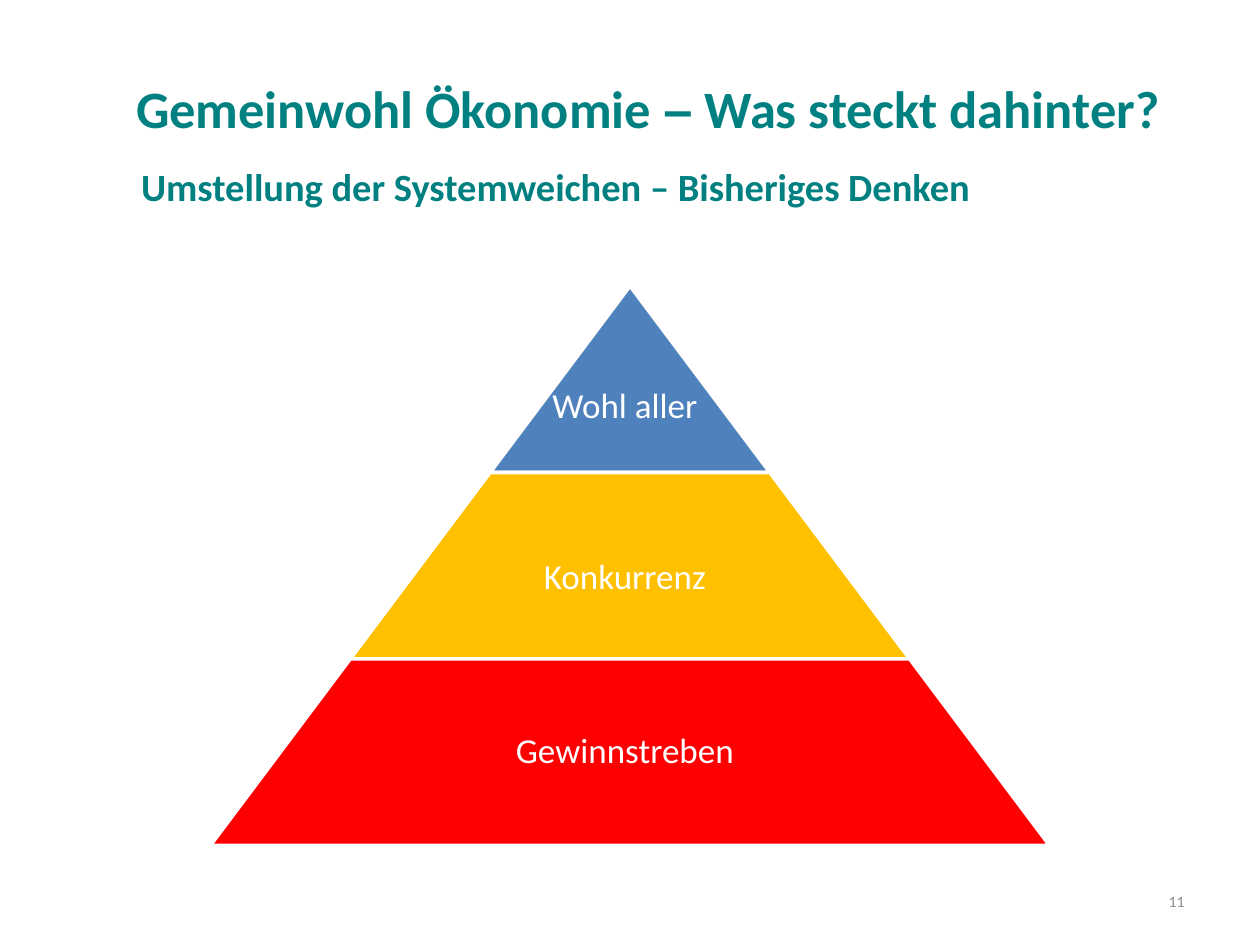
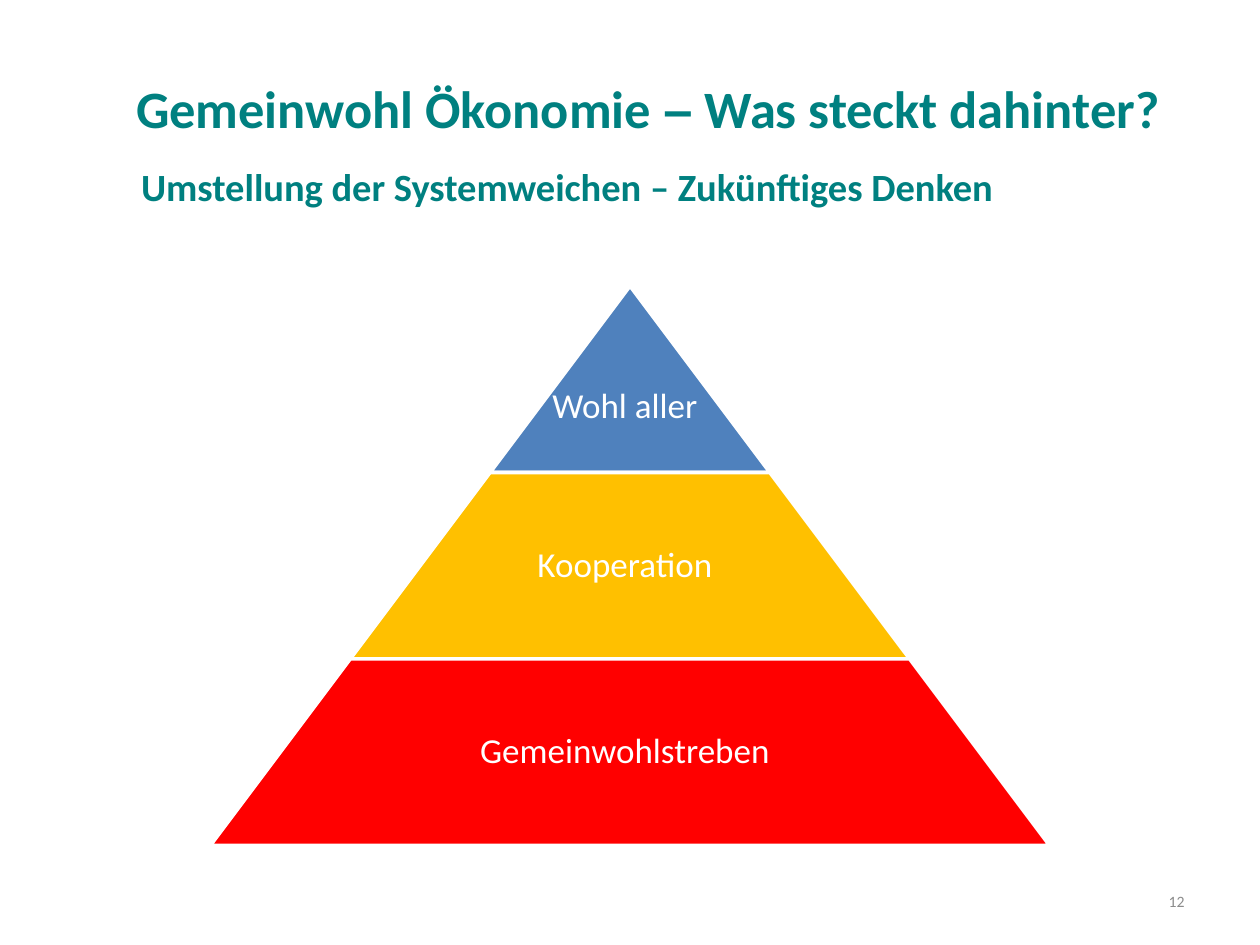
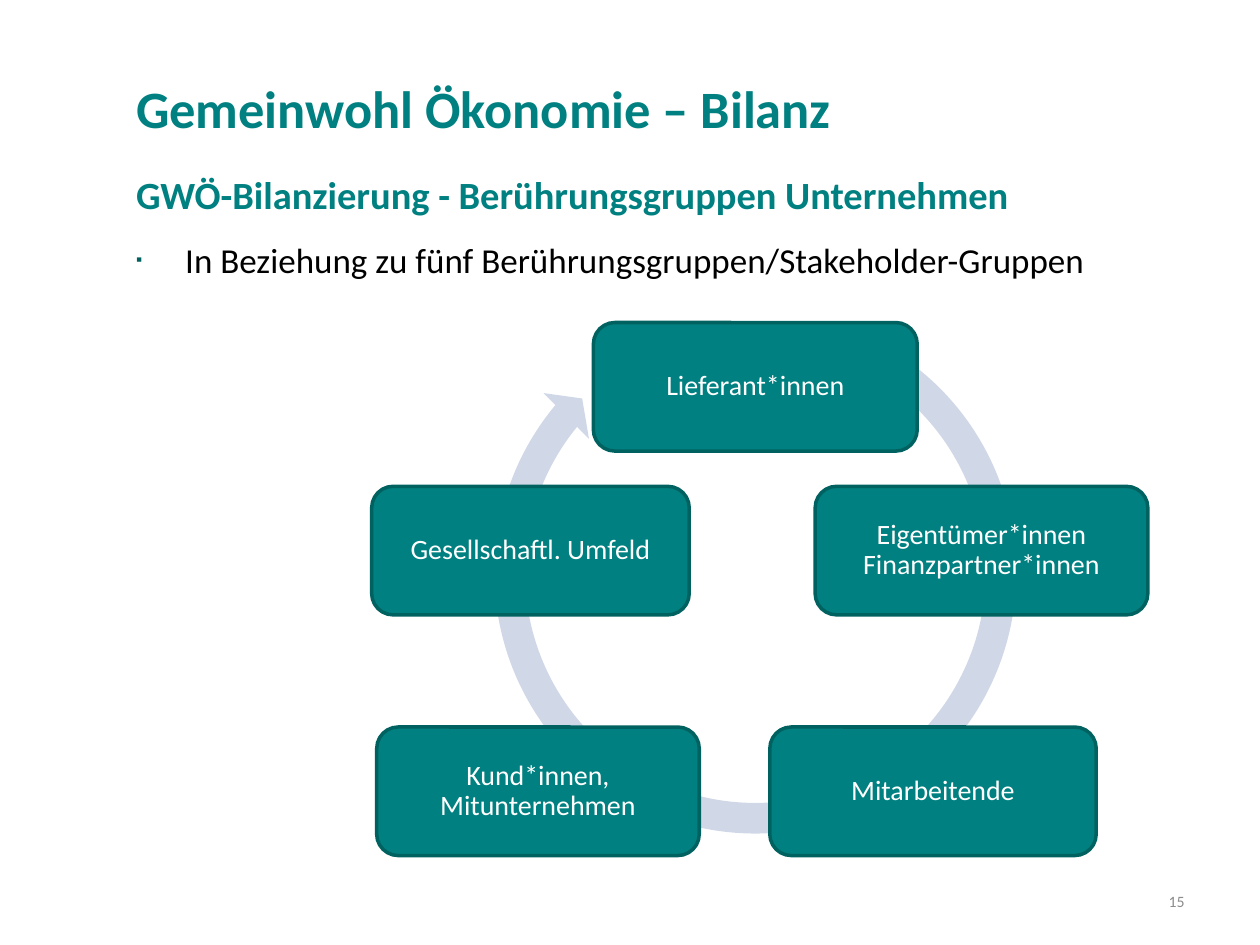
from pptx import Presentation
from pptx.dml.color import RGBColor
from pptx.enum.shapes import MSO_SHAPE
from pptx.enum.text import MSO_ANCHOR, MSO_AUTO_SIZE, PP_ALIGN
from pptx.oxml import parse_xml
from pptx.oxml.ns import nsdecls
from pptx.util import Inches, Pt

COLORS = {
    "teal": "008080", "dark_teal": "006260", "gray": "8C8C8C", "ring": "D0D8E8",
    "blue": "4F81BD", "amber": "FFC000", "red": "FF0000",
    "white": "FFFFFF", "black": "000000",
}
FORMATS = {
    "title": {"size": Pt(30), "bold": True, "color": "teal"},
    "subtitle": {"size": Pt(22), "bold": True, "color": "teal"},
    "bullet": {"size": Pt(20), "bold": False, "color": "black"},
    "number": {"size": Pt(9), "bold": False, "color": "gray"},
    "level": {"size": Pt(20), "bold": False, "color": "white"},
    "group": {"size": Pt(16), "bold": False, "color": "white"},
}


def add_run(p, text, style, font="Calibri"):
    r = p.add_run()
    r.text = text
    r.font.name = font
    for name, value in FORMATS[style].items():
        if name == "color":
            r.font.color.rgb = RGBColor.from_string(COLORS[value])
        else:
            setattr(r.font, name, value)


def add_shape(s, kind, box, fill, line=None, label="", style="group"):
    """Add a flat preset shape with a centred label; box is in inches."""
    sp = s.shapes.add_shape(kind, *map(Inches, box))
    sp.shadow.inherit = False
    sp.fill.solid()
    sp.fill.fore_color.rgb = RGBColor.from_string(COLORS[fill])
    if line:
        sp.line.color.rgb = RGBColor.from_string(COLORS[line])
        sp.line.width = Pt(2)
    else:
        sp.line.fill.background()
    if label:
        tf = sp.text_frame
        tf.vertical_anchor = MSO_ANCHOR.MIDDLE
        for side in ("left", "top", "right", "bottom"):
            setattr(tf, f"margin_{side}", Inches(0.07))
        p = tf.paragraphs[0]
        p.alignment = PP_ALIGN.CENTER
        p.line_spacing = 0.9
        add_run(p, label, style)
    return sp


prs = Presentation()
prs.slide_width, prs.slide_height = Inches(10), Inches(7.5)

# Title, subtitle and number of every slide
QUESTION = [("Gemeinwohl Ökonomie ", "Calibri"), ("–", "Arial"),
            (" Was steckt dahinter?", "Calibri")]
PAGES = [
    ("11", QUESTION, "Umstellung der Systemweichen – Bisheriges Denken",
     (1.02, 1.24, 8.19, 0.47)),
    ("12", QUESTION, "Umstellung der Systemweichen – Zukünftiges Denken",
     (1.02, 1.24, 8.19, 0.47)),
    ("15", [("Gemeinwohl Ökonomie – Bilanz", "Calibri")],
     "GWÖ-Bilanzierung - Berührungsgruppen Unternehmen",
     (0.98, 1.31, 8.52, 0.98)),
]
for number, title, subtitle, body_box in PAGES:
    s = prs.slides.add_slide(prs.slide_layouts[1])
    body = s.placeholders[1]
    number_box = s.shapes.add_textbox(0, 0, 0, 0)
    for sp, box in ((s.shapes.title, (0.98, 0.23, 9, 1.25)), (body, body_box),
                    (number_box, (7.17, 6.95, 2.33, 0.4))):
        sp.left, sp.top, sp.width, sp.height = map(Inches, box)
        tf = sp.text_frame
        tf.word_wrap = True
        tf.auto_size = MSO_AUTO_SIZE.NONE
        tf.vertical_anchor = MSO_ANCHOR.TOP if sp is body else MSO_ANCHOR.MIDDLE

    p = s.shapes.title.text_frame.paragraphs[0]
    p.alignment = PP_ALIGN.LEFT
    for text, font in title:
        add_run(p, text, "title", font)

    p = body.text_frame.paragraphs[0]
    pPr = p._p.get_or_add_pPr()
    pPr.set("marL", "0")
    pPr.set("indent", "0")
    pPr.append(parse_xml(f"<a:buNone {nsdecls('a')}/>"))
    p.space_before = Pt(0)
    add_run(p, subtitle, "subtitle")

    p = number_box.text_frame.paragraphs[0]
    p.alignment = PP_ALIGN.RIGHT
    add_run(p, number, "number")

# Pyramids: each level is one step wider; drop is the label's distance below mid-level
LEVEL_HEIGHT, SLOPE, PYRAMID_TOP, PYRAMID_CENTER = 1.48, 0.75, 2.27, 5
PYRAMIDS = [
    [("Wohl aller", 0.22), ("Konkurrenz", 0.1), ("Gewinnstreben", 0)],
    [("Wohl aller", 0.22), ("Kooperation", 0), ("Gemeinwohlstreben", 0)],
]
for s, levels in zip(prs.slides, PYRAMIDS):
    for n, ((label, drop), fill) in enumerate(zip(levels, ("blue", "amber", "red")), 1):
        width = 2 * SLOPE * LEVEL_HEIGHT * n
        box = (PYRAMID_CENTER - width / 2, PYRAMID_TOP + (n - 1) * LEVEL_HEIGHT,
               width, LEVEL_HEIGHT)
        sp = add_shape(s, MSO_SHAPE.TRAPEZOID, box, fill, "white", label, "level")
        sp.adjustments[0] = SLOPE
        tf = sp.text_frame
        tf.word_wrap = False
        tf.margin_left = tf.margin_top = 0
        tf.margin_right = Inches(0.08)
        # The text area of a trapezoid starts lower the narrower its top is
        tf.margin_bottom = Inches(LEVEL_HEIGHT / (3 * n) - 2 * drop)

# Stakeholder cycle
s = prs.slides[2]
p = s.placeholders[1].text_frame.add_paragraph()
p.level = 1
pPr = p._p.get_or_add_pPr()
pPr.set("marL", str(Inches(0.39)))
pPr.set("indent", str(Inches(-0.39)))
for xml in (f'<a:buClr {nsdecls("a")}><a:srgbClr val="{COLORS["dark_teal"]}"/></a:buClr>',
            f'<a:buSzPct {nsdecls("a")} val="50000"/>',
            f'<a:buChar {nsdecls("a")} char="▪"/>'):
    pPr.append(parse_xml(xml))
p.space_before = Pt(12)
add_run(p, "In Beziehung zu fünf Berührungsgruppen/Stakeholder-Gruppen", "bullet")

ring = add_shape(s, MSO_SHAPE.CIRCULAR_ARROW, (3.79, 2.34, 4.41, 4.41), "ring")
for i, value in enumerate((0.055, 3.307, 131.79, 177.61, 0.058)):
    ring.adjustments[i] = value

GROUPS = [
    ("Lieferant*innen", 4.71, 2.56, 2.57),
    ("Eigentümer*innen Finanzpartner*innen", 6.47, 3.86, 2.64),
    ("Mitarbeitende", 6.11, 5.77, 2.59),
    ("Kund*innen, Mitunternehmen", 2.99, 5.77, 2.56),
    ("Gesellschaftl. Umfeld", 2.95, 3.86, 2.52),
]
for label, left, top, width in GROUPS:
    add_shape(s, MSO_SHAPE.ROUNDED_RECTANGLE, (left, top, width, 1.02),
              "teal", "dark_teal", label)

prs.save("out.pptx")
